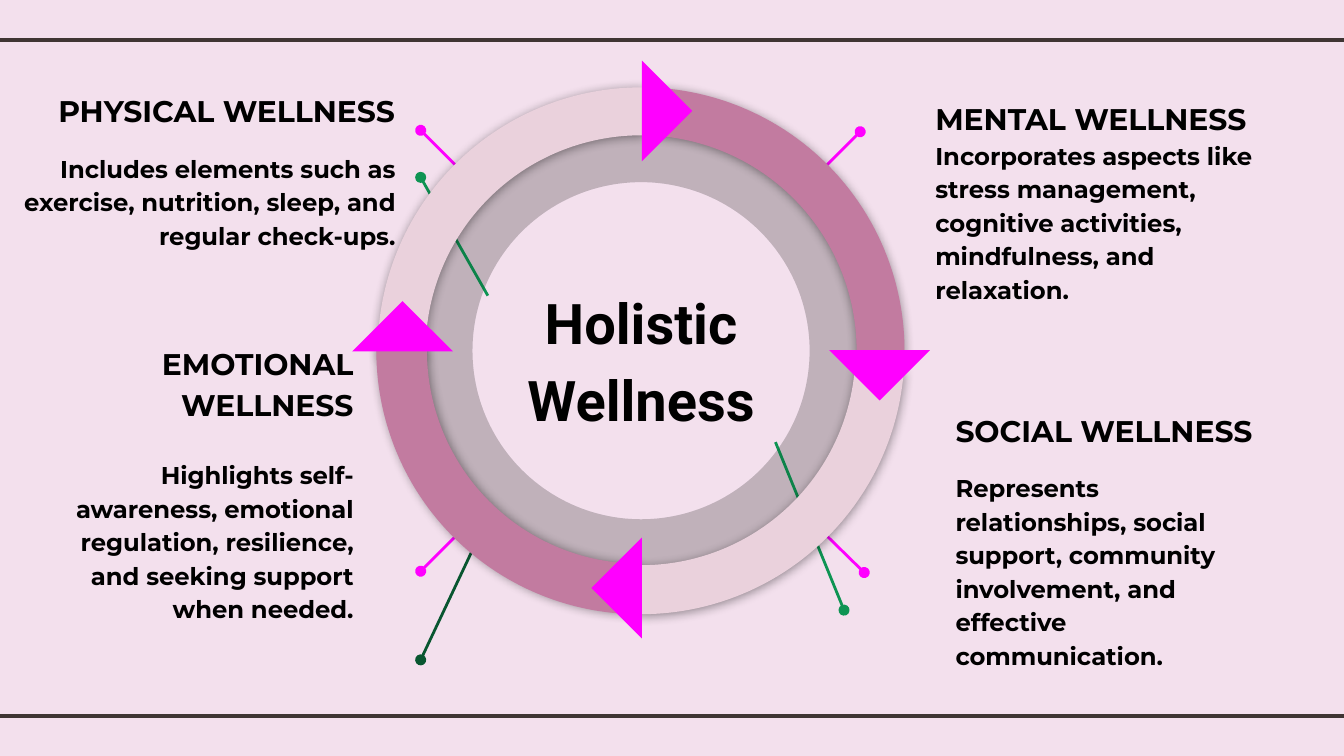
"""Build the Holistic Wellness cycle slide."""
from lxml import etree
from pptx import Presentation
from pptx.dml.color import RGBColor
from pptx.enum.shapes import MSO_CONNECTOR, MSO_SHAPE
from pptx.enum.text import MSO_ANCHOR, PP_ALIGN
from pptx.oxml import parse_xml
from pptx.oxml.ns import nsdecls, qn
from pptx.util import Inches, Pt

COLORS = {
    "background": "F3E0ED", "rule": "3F3533", "text": "000000",
    "green": "0E9453", "dark_green": "085630", "magenta": "FF00FF",
    "blush": "EAD1DC", "mauve": "C27BA0",
}

presentation = Presentation()
presentation.slide_width = Inches(10)
presentation.slide_height = Inches(10) * 9 // 16
slide = presentation.slides.add_slide(presentation.slide_layouts[6])
slide.background.fill.solid()
slide.background.fill.fore_color.rgb = RGBColor.from_string(COLORS["background"])


def add_line(start, end, color, width=1.5, dot=True):
    line = slide.shapes.add_connector(
        MSO_CONNECTOR.STRAIGHT, *map(Inches, start + end))
    line.line.color.rgb = RGBColor.from_string(COLORS[color])
    line.line.width = Pt(width)
    properties = line.element.spPr
    if dot:
        etree.SubElement(properties.find(qn("a:ln")), qn("a:headEnd"), type="oval")
    etree.SubElement(properties, qn("a:effectLst"))


def add_filled_shape(kind, left, top, size, color, rotation=0):
    shape = slide.shapes.add_shape(kind, *map(Inches, (left, top, size, size)))
    shape.shadow.inherit = False
    shape.fill.solid()
    shape.fill.fore_color.rgb = RGBColor.from_string(COLORS[color])
    shape.line.fill.background()
    shape.rotation = rotation
    return shape


for y in (0.3, 5.33):
    add_line((-0.08, y), (10.08, y), "rule", 2.25, dot=False)

donuts = []
for layer in range(2):
    donut = add_filled_shape(MSO_SHAPE.DONUT, 2.92, 0.76, 3.7, "text")
    donut.adjustments[0] = 0.161
    color_element = donut.element.spPr.find(qn("a:solidFill"))[0]
    etree.SubElement(color_element, qn("a:alpha"), val="11000")
    donuts.append(donut)

for start, end, color in (
    ((3.13, 1.32), (3.63, 2.2), "green"),
    ((3.13, 4.91), (3.63, 3.85), "dark_green"),
    ((6.28, 4.54), (5.77, 3.29), "green"),
):
    add_line(start, end, color)

sections = (
    (-0.51, 0.52, 3.58, 1.72, PP_ALIGN.RIGHT, 11.2, "PHYSICAL WELLNESS",
     "Includes elements such as exercise, nutrition, sleep, and regular check-ups."),
    (0.1, 2.4, 2.66, 2.07, PP_ALIGN.RIGHT, 18.2, "EMOTIONAL WELLNESS",
     "Highlights self-awareness, emotional regulation, resilience, "
     "and seeking support when needed."),
    (6.98, 2.9, 2.63, 2.39, PP_ALIGN.LEFT, 11.2, "SOCIAL WELLNESS",
     "Represents relationships, social support, community involvement, "
     "and effective communication."),
    (6.83, 0.58, 2.63, 0.98, PP_ALIGN.LEFT, 0, "MENTAL WELLNESS",
     "Incorporates aspects like stress management, cognitive activities, "
     "mindfulness, and relaxation."),
    (3.72, 2.06, 2.1, 1.17, PP_ALIGN.CENTER, 0, "Holistic Wellness", None),
)
for left, top, width, height, alignment, gap, heading, body in sections:
    box = slide.shapes.add_textbox(*map(Inches, (left, top, width, height)))
    frame = box.text_frame
    frame.word_wrap = True
    frame.margin_left = frame.margin_right = Inches(0.13)
    frame.margin_top = frame.margin_bottom = Inches(0.13)
    frame.vertical_anchor = MSO_ANCHOR.TOP if body else MSO_ANCHOR.MIDDLE
    frame.text = f"{heading}\n{body}" if body else heading
    sizes = (16, 13) if body else (30,)
    for paragraph, size in zip(frame.paragraphs, sizes):
        paragraph.alignment = alignment
        paragraph.line_spacing = 1.15
        paragraph.font.name = "Montserrat" if body else "Roboto"
        paragraph.font.size = Pt(size)
        paragraph.font.bold = True
        paragraph.font.color.rgb = RGBColor.from_string(COLORS["text"])
    if gap:
        frame.paragraphs[1].space_before = Pt(gap)

slide.shapes._spTree.append(donuts[1].element)

for start, end in (
    ((3.13, 0.97), (3.63, 1.47)),
    ((3.13, 4.25), (3.63, 3.75)),
    ((6.43, 4.26), (5.91, 3.75)),
    ((6.4, 0.98), (5.91, 1.47)),
):
    add_line(start, end, "magenta")

for left, rotation, flipped, start, end, thickness, color, direction in (
    (2.81, 330, True, 143.49, 198.72, 0.091, "blush", 90),
    (2.81, 30, False, 145.46, 199.02, 0.091, "mauve", 90),
    (2.8, 150, False, 180.42, 17.99, 0.096, "mauve", 0),
    (2.81, 210, True, 179.67, 15.3, 0.093, "blush", 90),
):
    arc = add_filled_shape(MSO_SHAPE.BLOCK_ARC, left, 0.65, 3.92, color, rotation)
    for index, value in enumerate((start, end, thickness)):
        arc.adjustments[index] = value
    properties = arc.element.spPr
    if flipped:
        properties.find(qn("a:xfrm")).set("flipH", "1")
    properties.find(qn("a:effectLst")).append(parse_xml(
        f'<a:outerShdw {nsdecls("a")} blurRad="{Pt(5.6)}" dist="{Pt(0.8)}" '
        f'dir="{direction * 60000}" algn="ctr" rotWithShape="0">'
        f'<a:srgbClr val="{COLORS["text"]}"><a:alpha val="40000"/></a:srgbClr>'
        '</a:outerShdw>'))

for left, top, rotation in (
    (2.73, 2.35, 135), (6.28, 2.34, 315), (4.51, 4.11, 45), (4.51, 0.56, 225),
):
    add_filled_shape(MSO_SHAPE.RIGHT_TRIANGLE, left, top, 0.53, "magenta", rotation)

presentation.save("out.pptx")
